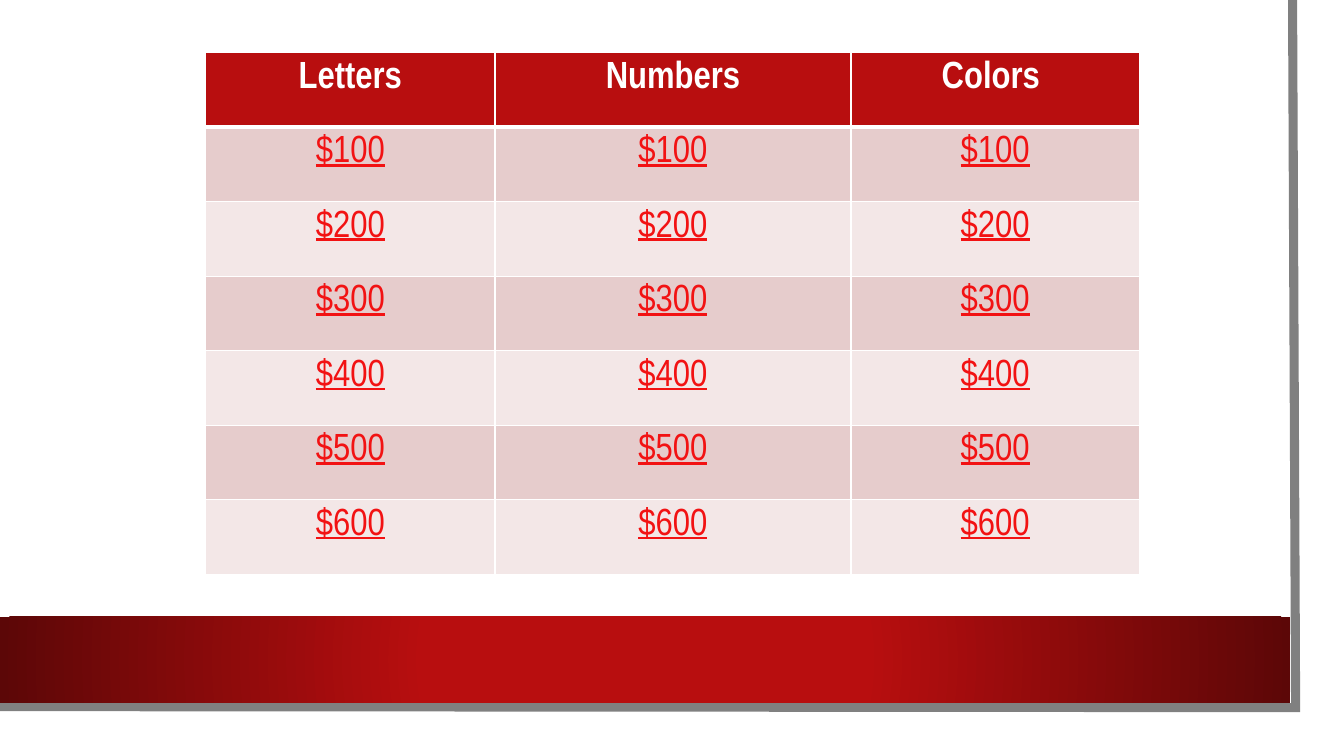
from dataclasses import dataclass

from lxml.etree import SubElement
from pptx import Presentation
from pptx.dml.color import RGBColor as Rgb
from pptx.enum.text import PP_ALIGN as Align
from pptx.oxml import parse_xml
from pptx.oxml.ns import nsdecls, qn
from pptx.util import Inches, Pt


@dataclass(frozen=True)
class Theme:
    """Colours, font and sizes of the game board."""
    white: str = "FFFFFF"
    red: str = "B80E0F"
    dark_red: str = "5C0707"
    edge: str = "808080"
    value: str = "F21213"
    odd_row: str = "E6CCCC"
    even_row: str = "F3E7E7"
    font: str = "Arial Narrow"
    text_size: float = 27
    edge_width: float = 6.5
    grid_width: float = 1
    header_rule: float = 3


THEME = Theme()
CATEGORIES = ["Letters", "Numbers", "Colors "]
VALUES = [f"${amount}" for amount in range(100, 700, 100)]
COLUMN_WIDTHS = [2.87, 3.53, 2.86]
ROW_HEIGHT = 0.74


def apply_format(target, formats):
    """Set each attribute named in formats on the target."""
    for name, setting in formats.items():
        setattr(target, name, setting)


def paint(fill, color):
    """Give a fill one solid colour."""
    fill.solid()
    fill.fore_color.rgb = Rgb.from_string(color)


def add_panel(slide, left, top, width, height):
    """Add a white rectangle without outline or shadow."""
    panel = slide.shapes.add_shape(1, *map(Inches, (left, top, width, height)))
    panel.shadow.inherit = False
    panel.line.fill.background()
    paint(panel.fill, THEME.white)
    return panel


def add_band(slide):
    """Add the red band that darkens away from its centre."""
    band = add_panel(slide, 0, 6.12, 12.8, 0.85)
    band.fill.gradient()
    stops = [(0.34, THEME.red), (1, THEME.dark_red)]
    for stop, (position, color) in zip(band.fill.gradient_stops, stops):
        stop.position = position
        stop.color.rgb = Rgb.from_string(color)
    gradient = band.fill._xPr.find(qn("a:gradFill"))
    gradient.replace(gradient.find(qn("a:lin")), parse_xml(
        f'<a:path {nsdecls("a")} path="circle">'
        '<a:fillToRect l="50000" t="50000" r="50000" b="50000"/></a:path>'))


def add_page_edge(slide):
    """Add the grey edge along the right and bottom of the page."""
    start, *corners = [(Inches(x), Inches(y)) for x, y in
                       [(12.82, 0), (12.85, 7.02), (-0.03, 7.01)]]
    outline = slide.shapes.build_freeform(*start)
    outline.add_line_segments(corners, close=False)
    edge = outline.convert_to_shape()
    edge.shadow.inherit = False
    edge.fill.background()
    paint(edge.line.fill, THEME.edge)
    edge.line.width = Pt(THEME.edge_width)
    SubElement(edge.line._ln, qn("a:miter"), lim="800000")


def add_borders(cell, bottom_width):
    """Draw white lines on the four sides of a cell."""
    properties = cell._tc.get_or_add_tcPr()
    widths = {"lnL": THEME.grid_width, "lnR": THEME.grid_width,
              "lnT": THEME.grid_width, "lnB": bottom_width}
    for index, (side, width) in enumerate(widths.items()):
        properties.insert(index, parse_xml(
            f'<a:{side} {nsdecls("a")} w="{Pt(width)}"><a:solidFill>'
            f'<a:srgbClr val="{THEME.white}"/></a:solidFill></a:{side}>'))


def fill_cell(cell, text, row_index):
    """Write and format one cell as a category or a money value."""
    is_header = row_index == 0
    row_color = THEME.odd_row if row_index % 2 else THEME.even_row
    paint(cell.fill, THEME.red if is_header else row_color)
    apply_format(cell, {
        "margin_left": Inches(0.15), "margin_right": Inches(0.15),
        "margin_top": Inches(0.08), "margin_bottom": Inches(0.08)})
    paragraph = cell.text_frame.paragraphs[0]
    paragraph.alignment = Align.CENTER
    label = paragraph.add_run()
    label.text = text
    apply_format(label.font, {
        "name": THEME.font, "size": Pt(THEME.text_size),
        "bold": is_header, "underline": not is_header})
    label.font.color.rgb = Rgb.from_string(
        THEME.white if is_header else THEME.value)
    above_rule = row_index < 2
    add_borders(cell, THEME.header_rule if is_header else THEME.grid_width)
    if above_rule and not is_header:
        cell._tc.tcPr.find(qn("a:lnT")).set("w", str(Pt(THEME.header_rule)))


def add_board(slide):
    """Add the table of categories and money values."""
    rows = [CATEGORIES] + [[value] * len(CATEGORIES) for value in VALUES]
    board = slide.shapes.add_table(
        len(rows), len(CATEGORIES), Inches(2.04), Inches(0.52),
        Inches(sum(COLUMN_WIDTHS)), Inches(ROW_HEIGHT * len(rows))).table
    for column, width in zip(board.columns, COLUMN_WIDTHS):
        column.width = Inches(width)
    for row_index, texts in enumerate(rows):
        board.rows[row_index].height = Inches(ROW_HEIGHT)
        for column_index, text in enumerate(texts):
            fill_cell(board.cell(row_index, column_index), text, row_index)


def main():
    """Build the game board slide and save it."""
    deck = Presentation()
    apply_format(deck, {"slide_width": Inches(13.33),
                        "slide_height": Inches(7.5)})
    slide = deck.slides.add_slide(deck.slide_layouts[6])
    paint(slide.background.fill, THEME.white)
    add_panel(slide, 0, 0, 13.1, 7.27)
    add_page_edge(slide)
    add_band(slide)
    add_board(slide)
    deck.save("out.pptx")


if __name__ == "__main__":
    main()
